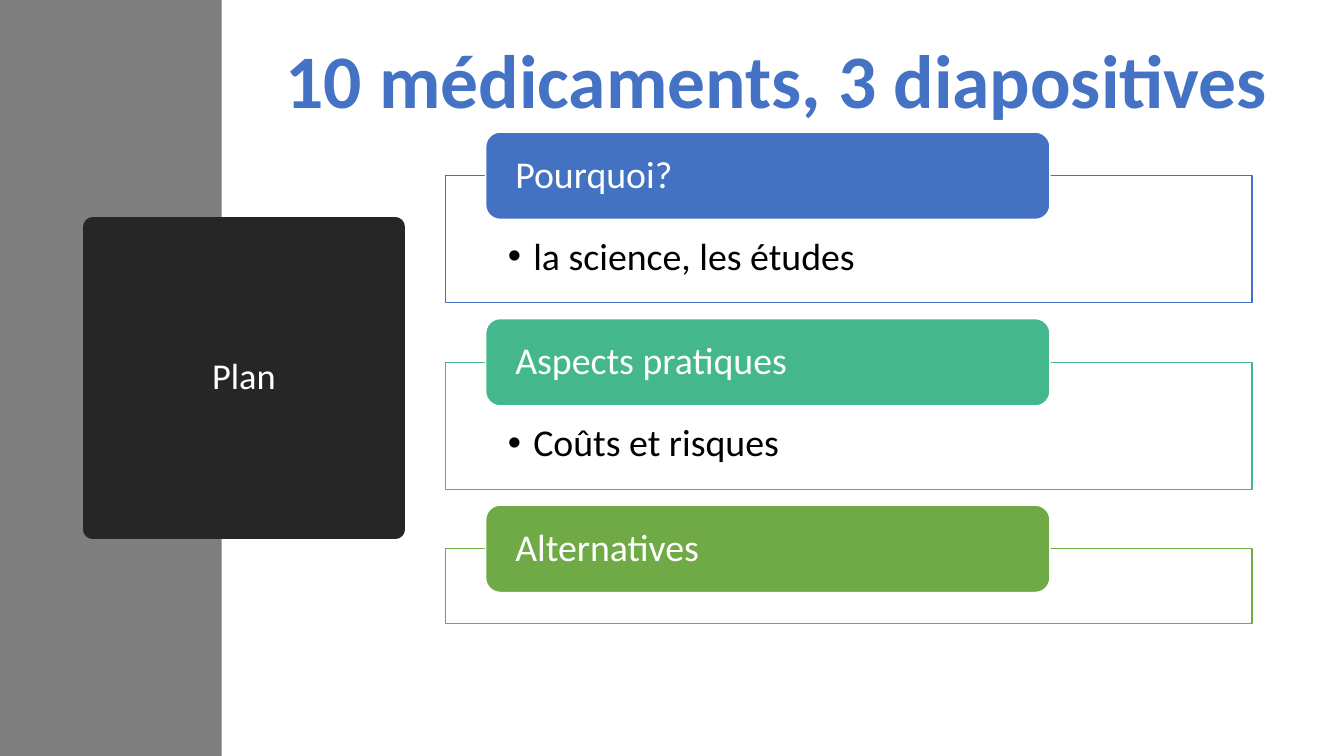
from dataclasses import dataclass

from lxml import etree
from pptx import Presentation
from pptx.dml.color import RGBColor
from pptx.enum.shapes import MSO_SHAPE
from pptx.enum.text import MSO_ANCHOR, MSO_AUTO_SIZE, PP_ALIGN
from pptx.oxml.ns import qn
from pptx.util import Cm, Pt

RECTANGLE = MSO_SHAPE.RECTANGLE
ROUNDED = MSO_SHAPE.ROUNDED_RECTANGLE
TOP, MIDDLE = MSO_ANCHOR.TOP, MSO_ANCHOR.MIDDLE
LEFT, CENTER = PP_ALIGN.LEFT, PP_ALIGN.CENTER
NO_AUTOFIT = MSO_AUTO_SIZE.NONE

TWO_CONTENT_LAYOUT = 3
FONT = "Calibri"
WHITE, BLACK = "FFFFFF", "000000"
TOPIC_SIZE = 27
FIRST_CAPTION_TOP, TOPIC_PITCH = 3.33, 4.7
CAPTION_LEFT, CAPTION_WIDTH, CAPTION_HEIGHT = 12.24, 14.22, 2.2
PANEL_LEFT, PANEL_WIDTH = 11.23, 20.32
BULLET_INDENT = 0.64


@dataclass(frozen=True)
class Frame:
    left: float
    top: float
    width: float
    height: float

    def lengths(self) -> tuple:
        return Cm(self.left), Cm(self.top), Cm(self.width), Cm(self.height)


@dataclass(frozen=True)
class Topic:
    caption: str
    color: str
    panel_height: float
    detail: str = ""


TOPICS = [
    Topic("Pourquoi?", "4372C3", 3.2, "la science, les études"),
    Topic("Aspects pratiques", "44B78C", 3.2, "Coûts et risques"),
    Topic("Alternatives", "6FAA47", 1.88),
]


def rgb(color: str) -> RGBColor:
    return RGBColor.from_string(color)


def place(shape, frame: Frame) -> None:
    shape.left, shape.top, shape.width, shape.height = frame.lengths()


def paint(shape, fill: str, line: str = "", line_width: float = 1, opacity: int = 100) -> None:
    shape.shadow.inherit = False
    shape.fill.solid()
    shape.fill.fore_color.rgb = rgb(fill)
    if opacity < 100:
        color = shape.fill._xPr.find(qn("a:solidFill"))[0]
        etree.SubElement(color, qn("a:alpha"), val=str(opacity * 1000))
    if line:
        shape.line.color.rgb = rgb(line)
        shape.line.width = Pt(line_width)
    else:
        shape.line.fill.background()


def write(shape, text: str, *, size: float, color: str, bold: bool = False,
          align=LEFT, anchor=MIDDLE, insets=(0.25, 0.13, 0.25, 0.13),
          spacing: float = 0.9, bullet: bool = False) -> None:
    frame = shape.text_frame
    frame.word_wrap = True
    frame.auto_size = NO_AUTOFIT
    frame.vertical_anchor = anchor
    (frame.margin_left, frame.margin_top,
     frame.margin_right, frame.margin_bottom) = map(Cm, insets)
    para = frame.paragraphs[0]
    para.alignment = align
    para.line_spacing = spacing
    para.space_before = Pt(0)
    if bullet:
        properties = para._p.get_or_add_pPr()
        properties.set("marL", str(Cm(BULLET_INDENT)))
        properties.set("indent", str(-Cm(BULLET_INDENT)))
        etree.SubElement(properties, qn("a:buChar"), char="•")
    span = para.add_run()
    span.text = text
    span.font.name = FONT
    span.font.size = Pt(size)
    span.font.bold = bold
    span.font.color.rgb = rgb(color)


def draw_sidebar(slide) -> None:
    band = slide.shapes.add_shape(RECTANGLE, *Frame(0, 0, 5.59, 19.05).lengths())
    paint(band, "7F7F7F")
    title = slide.shapes.title
    title.element.addprevious(band.element)
    place(title, Frame(2.34, 5.72, 7.62, 7.62))
    paint(title, "262626", "262626", 13.75)
    etree.SubElement(title.line._get_or_add_ln(), qn("a:round"))
    write(title, "Plan", size=26, color=WHITE, align=CENTER)


def draw_topic(slide, topic: Topic, top: float, bodies) -> None:
    frame = Frame(PANEL_LEFT, top + CAPTION_HEIGHT / 2, PANEL_WIDTH, topic.panel_height)
    if topic.detail:
        panel = next(bodies)
        place(panel, frame)
        write(panel, topic.detail, size=TOPIC_SIZE, color=BLACK, anchor=TOP,
              insets=(1.57, 1.55, 1.57, 0.53), bullet=True)
    else:
        panel = slide.shapes.add_shape(RECTANGLE, *frame.lengths())
    paint(panel, WHITE, topic.color, opacity=90)

    caption_frame = Frame(CAPTION_LEFT, top, CAPTION_WIDTH, CAPTION_HEIGHT)
    caption = slide.shapes.add_shape(ROUNDED, *caption_frame.lengths())
    paint(caption, topic.color, WHITE)
    write(caption, topic.caption, size=TOPIC_SIZE, color=WHITE,
          insets=(0.64, 0, 0.64, 0))


def main() -> None:
    deck = Presentation()
    deck.slide_width, deck.slide_height = Cm(33.87), Cm(19.05)
    slide = deck.slides.add_slide(deck.slide_layouts[TWO_CONTENT_LAYOUT])
    bodies = iter(list(slide.placeholders)[1:])
    draw_sidebar(slide)
    for index, topic in enumerate(TOPICS):
        draw_topic(slide, topic, FIRST_CAPTION_TOP + index * TOPIC_PITCH, bodies)
    headline = slide.shapes.add_textbox(*Frame(6.81, 0.69, 25.53, 2.57).lengths())
    write(headline, "10 médicaments, 3 diapositives", size=54, color="4472C4",
          bold=True, align=CENTER, anchor=TOP, spacing=1)
    deck.save("out.pptx")


if __name__ == "__main__":
    main()
